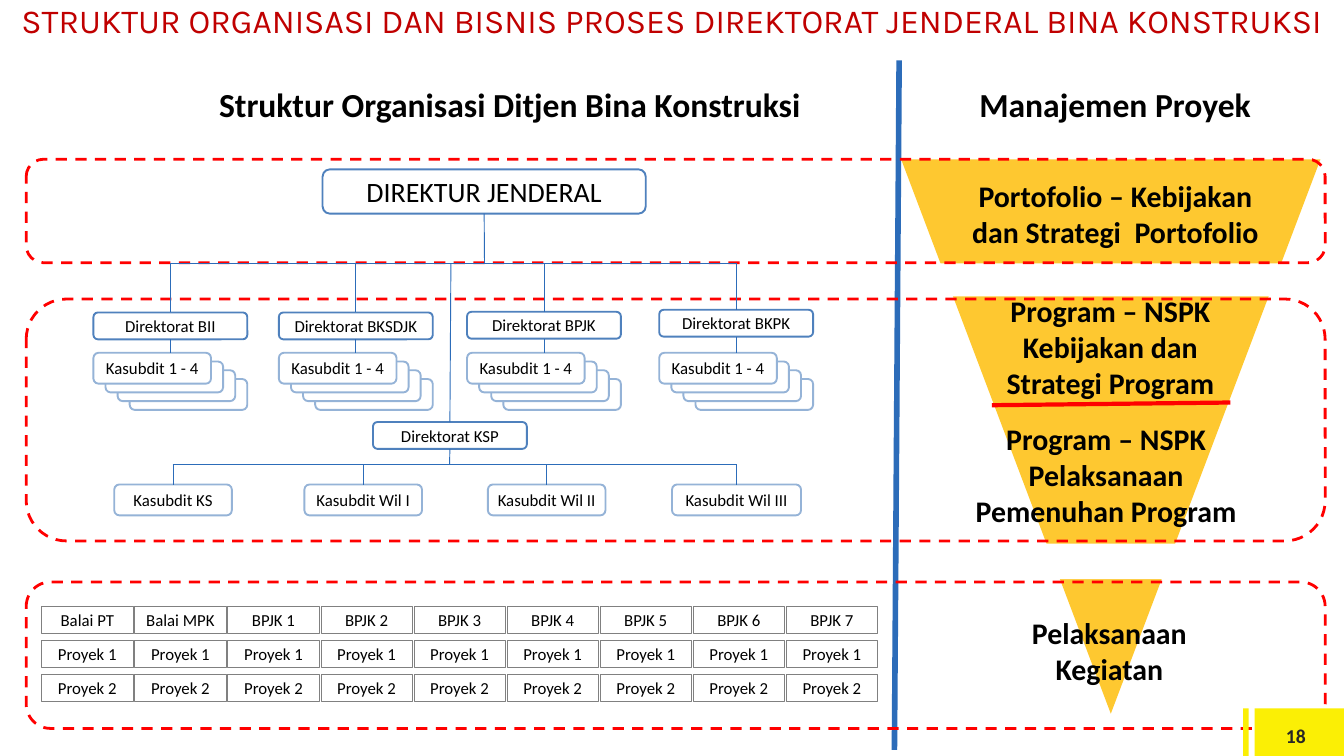
from lxml import etree
from pptx import Presentation
from pptx.dml.color import RGBColor
from pptx.enum.dml import MSO_LINE
from pptx.enum.shapes import MSO_CONNECTOR, MSO_SHAPE
from pptx.enum.text import MSO_ANCHOR, MSO_AUTO_SIZE, PP_ALIGN
from pptx.oxml.ns import qn
from pptx.util import Pt

RECTANGLE, ROUNDED = MSO_SHAPE.RECTANGLE, MSO_SHAPE.ROUNDED_RECTANGLE
TRIANGLE, STRAIGHT = MSO_SHAPE.ISOSCELES_TRIANGLE, MSO_CONNECTOR.STRAIGHT
DASH, GROW = MSO_LINE.DASH, MSO_AUTO_SIZE.SHAPE_TO_FIT_TEXT
TOP, MIDDLE = MSO_ANCHOR.TOP, MSO_ANCHOR.MIDDLE
CENTER, RIGHT = PP_ALIGN.CENTER, PP_ALIGN.RIGHT
TOP_SIDE, BOTTOM_SIDE = 0, 2

COLORS = {
    "white": "FFFFFF", "black": "000000", "title": "C00000", "red": "FF0000",
    "gold": "FEC830", "yellow": "FBEF05", "number": "262626", "grey": "808080",
    "connector": "2C6CB9", "unit": "4F81BD", "subunit": "95B3D7",
}

# The slide is a grid of 20 columns by 11.25 rows of one inch
presentation = Presentation()
CELL = 914400
presentation.slide_width = 20 * CELL
presentation.slide_height = int(11.25 * CELL)
slide = presentation.slides.add_slide(presentation.slide_layouts[6])


def add_box(parent, kind, place, text="", size=18, fill=None, line=None,
            weight=2, color="black", bold=False, font="Calibri", align=CENTER):
    """Add a preset shape, or a text box when kind is None."""
    position = [int(value * CELL) for value in place]
    if kind is None:
        shape = parent.add_textbox(*position)
    else:
        shape = parent.add_shape(kind, *position)
        shape.shadow.inherit = False
        if fill:
            shape.fill.solid()
            shape.fill.fore_color.rgb = RGBColor.from_string(COLORS[fill])
        else:
            shape.fill.background()
        if line:
            shape.line.color.rgb = RGBColor.from_string(COLORS[line])
            shape.line.width = Pt(weight)
        else:
            shape.line.fill.background()
    if text:
        frame = shape.text_frame
        frame.word_wrap = True
        frame.vertical_anchor = TOP if kind is None else MIDDLE
        across, down = (0.15, 0.07) if kind is None else (0.05, 0)
        frame.margin_left = frame.margin_right = int(across * CELL)
        frame.margin_top = frame.margin_bottom = int(down * CELL)
        for index, words in enumerate(text.split("\n")):
            paragraph = frame.add_paragraph() if index else frame.paragraphs[0]
            paragraph.alignment = align
            run = paragraph.add_run()
            run.text = words
            run.font.name, run.font.size, run.font.bold = font, Pt(size), bold
            run.font.color.rgb = RGBColor.from_string(COLORS[color])
    return shape


def add_line(start, end, color="connector", weight=1, above=None, below=None):
    """Add a straight line, joined to the box above or below it if given."""
    points = [int(value * CELL) for value in (*start, *end)]
    connector = slide.shapes.add_connector(STRAIGHT, *points)
    connector.line.color.rgb = RGBColor.from_string(COLORS[color])
    connector.line.width = Pt(weight)
    etree.SubElement(connector._element.spPr, qn("a:effectLst"))
    if above is not None:
        connector.begin_connect(above, BOTTOM_SIDE)
    if below is not None:
        connector.end_connect(below, TOP_SIDE)


shapes = slide.shapes

# Divider and inverted triangle, cut into three levels by white bands
add_line((13.38, 0.9), (13.31, 11.16), weight=6)
triangle = add_box(shapes, TRIANGLE, (13.41, 2.37, 6.24, 8.25), fill="gold")
triangle.rotation = 180
for band in ((13.66, 3.92, 5.87, 0.49), (15.09, 8.09, 2.75, 0.53)):
    add_box(shapes, RECTANGLE, band, fill="white")

# Dashed frames around the three levels
for row, height in ((2.37, 1.54), (4.45, 3.6), (8.66, 2.18)):
    frame_box = add_box(shapes, ROUNDED, (0.39, row, 19.33, height), line="red", weight=3)
    frame_box.line.dash_style = DASH

# Title
title = add_box(shapes, None, (0, 0, 20, 0.67),
                "STRUKTUR ORGANISASI DAN BISNIS PROSES DIREKTORAT JENDERAL BINA KONSTRUKSI",
                36, color="title", font="Karla")
title.text_frame.paragraphs[0].line_spacing = 0.9

# Headings and texts of the project management levels
for place, text, size in (
    ((2.69, 1.18, 9.8, 0.76), "Struktur Organisasi Ditjen Bina Konstruksi", 36),
    ((13.66, 1.18, 5.87, 0.76), "Manajemen Proyek", 36),
    ((14.21, 2.58, 4.78, 1.23), "Portofolio – Kebijakan dan Strategi  Portofolio", 32),
    ((14.68, 4.29, 3.69, 1.77), "Program – NSPK Kebijakan dan Strategi Program", 32),
    ((14.17, 6.19, 4.58, 1.77), "Program – NSPK Pelaksanaan Pemenuhan Program", 32),
    ((15.09, 9.08, 2.84, 1.23), "Pelaksanaan\nKegiatan", 32),
):
    label = add_box(shapes, None, place, text, size, bold=True)
    label.text_frame.auto_size = GROW
add_line((14.76, 6.03), (18.31, 5.99), "red", 4.5)

# Director general and the bus line below
BUS = 3.92
director = add_box(shapes, ROUNDED, (4.8, 2.52, 4.81, 0.66), "DIREKTUR JENDERAL", 30,
                   fill="white", line="unit")
add_line((7.21, 3.18), (7.21, BUS), above=director)
add_line((2.54, BUS), (10.96, BUS))

# Directorates, each with a stack of four subdirectorates
for name, column, row in (("BII", 1.39, 4.65), ("BKSDJK", 4.15, 4.65),
                          ("BPJK", 6.95, 4.64), ("BKPK", 9.81, 4.61)):
    directorate = add_box(shapes, ROUNDED, (column, row, 2.29, 0.4), f"Direktorat {name}",
                          fill="white", line="unit")
    for step in (3, 2, 1, 0):
        add_box(shapes, ROUNDED, (column + 0.18 * step, 5.25 + 0.13 * step, 1.75, 0.46),
                "" if step else "Kasubdit 1 - 4", fill="white", line="subunit")
    middle = column + 2.29 / 2
    add_line((middle, BUS), (middle, row), below=directorate)
    add_line((middle, row + 0.4), (middle, 5.26), above=directorate)

# Directorate KSP and its regional subdirectorates
LOWER_BUS = 6.91
ksp = add_box(shapes, ROUNDED, (5.55, 6.28, 2.29, 0.4), "Direktorat KSP",
              fill="white", line="unit")
add_line((6.71, BUS), (6.69, 6.28), below=ksp)
add_line((6.69, 6.68), (6.69, LOWER_BUS), above=ksp)
add_line((2.57, LOWER_BUS), (10.96, LOWER_BUS))
for name, column, width in (("KS", 1.7, 1.75), ("Wil I", 4.53, 1.75),
                            ("Wil II", 7.26, 1.75), ("Wil III", 10, 1.92)):
    subdirectorate = add_box(shapes, ROUNDED, (column, 7.21, width, 0.46),
                             f"Kasubdit {name}", fill="white", line="subunit")
    middle = column + width / 2
    add_line((middle, LOWER_BUS), (middle, 7.21), below=subdirectorate)

# Regional offices with their projects
offices = ["Balai PT", "Balai MPK"] + [f"BPJK {number}" for number in range(1, 8)]
for index, office in enumerate(offices):
    group = shapes.add_group_shape()
    for level, text in enumerate((office, "Proyek 1", "Proyek 2")):
        add_box(group.shapes, RECTANGLE, (0.62 + 1.385 * index, 9.03 + 0.505 * level, 1.36, 0.4),
                text, fill="white", line="grey", weight=0.75)

# Page number
page = shapes.add_group_shape().shapes
for column, width in ((18.67, 1.33), (18.5, 0.08)):
    add_box(page, RECTANGLE, (column, 10.54, width, 0.71), fill="yellow")
number = add_box(page, None, (18.79, 10.64, 0.79, 0.61), "18", 21, color="number",
                 bold=True, align=RIGHT)
number.text_frame.vertical_anchor = MIDDLE

presentation.save("out.pptx")
